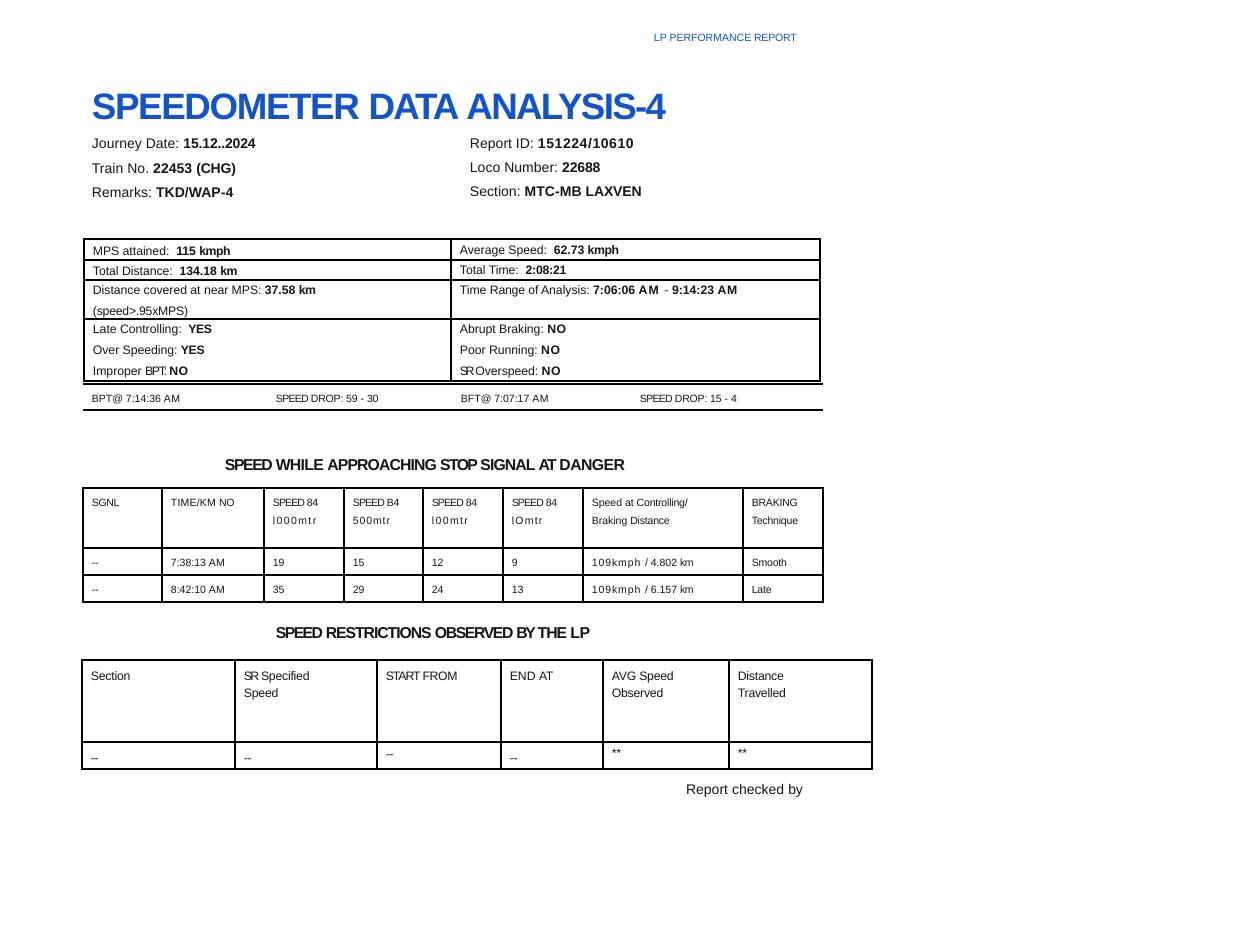
from lxml import etree
from pptx import Presentation
from pptx.dml.color import RGBColor
from pptx.enum.shapes import MSO_CONNECTOR as Conn
from pptx.enum.text import MSO_AUTO_SIZE as Fit
from pptx.oxml import parse_xml
from pptx.oxml.ns import nsdecls, qn
from pptx.util import Emu, Pt

SCALE = 914400 / 126
INK, BLUE = "161616", "1354C6"


def px(n):
    return Emu(round(n * SCALE))


def rgb(code):
    return RGBColor.from_string(code)


def write(frame, text, size=7, color=INK, gap=0, font="Arial"):
    """Fill a frame: \\n parts paragraphs, | parts runs, a leading ~ is bold,
    and a closing ^n tracks the run by n points."""
    frame.word_wrap = True
    for i, line in enumerate(text.split("\n")):
        para = frame.add_paragraph() if i else frame.paragraphs[0]
        para.space_before = Pt(gap if i else 0)
        for part in line.split("|"):
            words, _, track = part.partition("^")
            run = para.add_run()
            run.text = words.removeprefix("~")
            run.font.name, run.font.size = font, Pt(size)
            run.font.bold = words.startswith("~")
            run.font.color.rgb = rgb(color)
            if track:
                run.font._element.set("spc", str(round(float(track) * 100)))


def edge(cell, color="000000", width=1):
    """Draw all four borders of a cell."""
    props = cell._tc.get_or_add_tcPr()
    for side in "LRTB":
        props.append(parse_xml(
            f'<a:ln{side} {nsdecls("a")} w="{Pt(width)}"><a:solidFill>'
            f'<a:srgbClr val="{color}"/></a:solidFill></a:ln{side}>'))


class Page:
    def __init__(self, deck, color=INK):
        self.slide = deck.slides.add_slide(deck.slide_layouts[6])
        self.color = color

    def text(self, x, y, w, h, text, top=1, **style):
        box = self.slide.shapes.add_textbox(px(x), px(y), px(w), px(h))
        frame = box.text_frame
        frame.margin_left, frame.margin_top = px(1), px(top)
        frame.margin_right = frame.margin_bottom = 0
        write(frame, text, **{"color": self.color, **style})
        frame.auto_size = Fit.SHAPE_TO_FIT_TEXT

    def rule(self, x, y, w, width):
        line = self.slide.shapes.add_connector(
            Conn.STRAIGHT, px(x), px(y), px(x + w), px(y))
        line.line.color.rgb = rgb("000000")
        line.line.width = Pt(width)
        etree.SubElement(line._element.spPr, qn("a:effectLst"))

    def table(self, x, y, cols, rows, data, tops, **style):
        """Draw a grid; tops holds the top inset of each cell."""
        grid = self.slide.shapes.add_table(
            len(rows), len(cols), px(x), px(y),
            px(sum(cols)), px(sum(rows))).table
        grid.first_row = grid.horz_banding = False
        for col, w in zip(grid.columns, cols):
            col.width = px(w)
        for r, h in enumerate(rows):
            grid.rows[r].height = px(h)
            for c, text in enumerate(data[r]):
                cell = grid.cell(r, c)
                cell.margin_left, cell.margin_top = px(9), px(tops[r][c])
                cell.margin_right = cell.margin_bottom = 0
                edge(cell)
                cell.fill.background()
                write(cell.text_frame, text, **style)


def main():
    deck = Presentation()
    deck.slide_width, deck.slide_height = px(1260), px(945)
    page = Page(deck)

    page.rule(83, 384, 740, 1.2)
    page.rule(83, 410, 740, 0.96)

    page.table(84, 239, [367, 369], [21, 20, 39, 62], [
        ["MPS attained:  |~115 |~kmph^-0.2",
         "Average Speed:  |~62.73 |~kmph^-0.2"],
        ["Total Distance:  |~134.18 |~km^-0.2",
         "Total Time:  |~2:08:21^-0.1"],
        ["Distance covered at near MPS: |~37.58 |~km^-0.2\n"
         "(speed>.95xMPS)^-0.1",
         "Time |Range ^-0.1|of Analysis: |~7:06:06 |~AM ^0.7|- |"
         "~9:14:23 |~AM^0.5"],
        ["Late Controlling:  |~YES^-0.2\nOver Speeding: |~YES^-0.2\n"
         "Improper |BPT: ^-0.7|~NO^0.3",
         "Abrupt Braking: |~NO^0.3\nPoor Running: |~NO^0.3\n"
         "SR ^-1.4|Overspeed: |~NO^0.3"],
    ], [[5, 4], [4, 3], [3, 3], [3, 3]], gap=4.2)

    speeds = [f"SPEED ^-0.5|{at}^-0.2\n{dist}^{track}"
              for at, dist, track in [("84", "l000mtr", 0.8),
                                      ("B4", "500mtr", 0.5),
                                      ("84", "l00mtr", 0.8),
                                      ("84", "lOmtr", 0.7)]]
    stops = [["--^-0.2", f"{time} |AM^0.2", *marks,
              f"109kmph ^0.5|/ {dist} |km^-0.2", brake]
             for time, marks, dist, brake in [
                 ("7:38:13", ["19", "15", "12", "9"], "4.802", "Smooth^-0.1"),
                 ("8:42:10", ["35", "29", "24", "13"], "6.157", "Late^-0.1")]]
    page.table(83, 488, [79, 102, 80, 79, 80, 80, 160, 80], [60, 27, 27], [
        ["SGNL^-0.2", "TIME/KM ^0.1|NO^-0.2", *speeds,
         "Speed at |Controlling/^-0.1\nBraking |Distance^-0.1",
         "BRAKING^-0.1\nTechnique^-0.1"],
        *stops,
    ], [[9] * 8] * 3, size=6, gap=3.5)

    page.table(82, 660, [153, 142, 124, 102, 126, 143], [82, 27], [
        ["Section^-0.1", "SR ^-0.9|Specified^-0.1\nSpeed^-0.1",
         "START ^-0.6|FROM^-0.2", "END |AT^-0.2",
         "AVG Speed^-0.1\nObserved^-0.1", "Distance^-0.1\nTravelled^-0.1"],
        ["--^-0.2"] * 4 + ["**^-0.2"] * 2,
    ], [[9] * 6, [9, 9, 5, 9, 4, 4]], gap=2.3)

    page.text(653, 30, 176, 14, "LP PERFORMANCE |REPORT^-0.1",
              size=6, color=BLUE)
    page.text(91, 82, 853, 45,
              "~SPEEDOMETER ^-0.8|~DATA ^-1.1|~ANALYSIS-4^-1",
              size=21, color=BLUE)
    page.text(91, 126, 323, 76,
              "Journey Date: |~15.12..2024^-0.1\n"
              "Train No. |~22453 |~(CHG)^-0.1\n"
              "Remarks: |~TKD/WAP-|~4^-0.4", top=9, size=8, gap=4.2)
    page.text(469, 126, 260, 76,
              "Report ID: |~151224/10610^0.3\n"
              "Loco Number: |~22688^-0.1\n"
              "Section: |~MTC-MB |~LAXVEN^-0.1", top=9, size=8, gap=4.1)

    for x, w, note in [(91, 113, "BPT@ 7:14:36 |AM^0.3"),
                       (275, 126, "SPEED ^-0.4|DROP: ^-0.1|59 - |30^-0.2"),
                       (460, 112, "BFT@ 7:07:17 |AM^0.3"),
                       (639, 118, "SPEED ^-0.4|DROP: ^-0.1|15 - |4^-0.4")]:
        page.text(x, 391, w, 14, note, size=6)

    page.text(224, 454, 464, 20,
              "~SPEED ^-0.8|~WHILE ^-0.4|~APPROACHING ^-0.5|~STOP ^-0.9|"
              "~SIGNAL ^-0.5|~AT ^-1|~DANGER^-0.3", size=9)
    page.text(275, 622, 364, 20,
              "~SPEED ^-0.9|~RESTRICTIONS ^-0.6|~OBSERVED ^-0.8|~BY ^-1.3|"
              "~THE ^-0.6|~LP^-0.2", size=9)
    page.text(685, 780, 145, 19, "Report checked |by^-0.2", size=8)

    deck.save("out.pptx")


if __name__ == "__main__":
    main()
